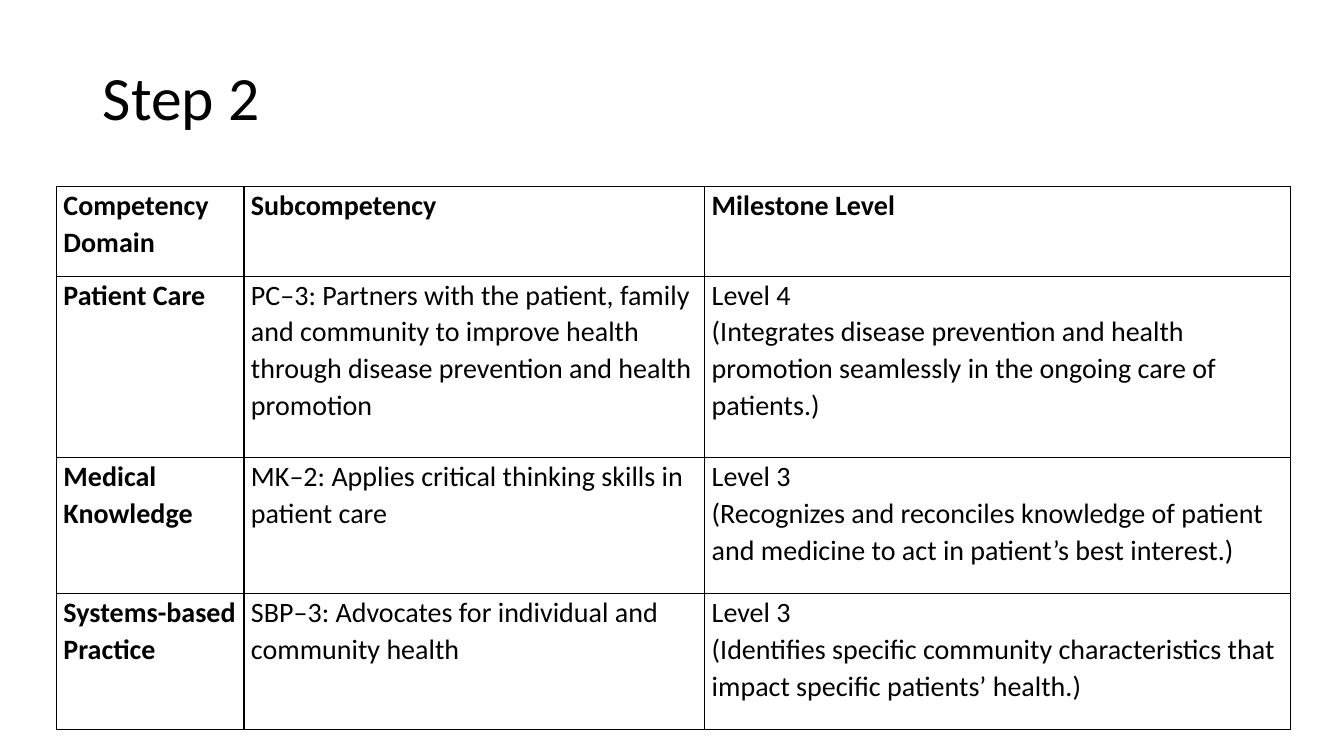
import pptx
import pptx.dml.color
import pptx.enum.text
import pptx.oxml.ns
import pptx.util
from lxml import etree

Inches = pptx.util.Inches
FONT = "Calibri"
BLACK = "000000"
WHITE = "FFFFFF"

COLUMN_WIDTHS = [1.86, 4.57, 5.81]
ROW_HEIGHTS = [0.89, 1.8, 1.35, 1.35]

# Each cell is a list of paragraphs
ROWS = [
    [["Competency Domain"], ["Subcompetency"], ["Milestone Level"]],
    [
        ["Patient Care"],
        ["PC–3: Partners with the patient, family and community to improve "
         "health through disease prevention and health promotion"],
        ["Level 4",
         "(Integrates disease prevention and health promotion seamlessly "
         "in the ongoing care of patients.)"],
    ],
    [
        ["Medical Knowledge"],
        ["MK–2: Applies critical thinking skills in patient care"],
        ["Level 3",
         "(Recognizes and reconciles knowledge of patient and medicine "
         "to act in patient’s best interest.)"],
    ],
    [
        ["Systems-based Practice"],
        ["SBP–3: Advocates for individual and community health"],
        ["Level 3",
         "(Identifies specific community characteristics that impact "
         "specific patients’ health.)"],
    ],
]


def color(hex_string):
    return pptx.dml.color.RGBColor.from_string(hex_string)


def add_run(paragraph, text, size, bold=False):
    run = paragraph.add_run()
    run.text = text
    run.font.name = FONT
    run.font.size = pptx.util.Pt(size)
    run.font.bold = bold
    run.font.color.rgb = color(BLACK)


def add_borders(cell):
    properties = cell._tc.get_or_add_tcPr()
    for side in ("a:lnL", "a:lnR", "a:lnT", "a:lnB"):
        line = etree.SubElement(properties, pptx.oxml.ns.qn(side),
                                w=str(pptx.util.Pt(1)))
        fill = etree.SubElement(line, pptx.oxml.ns.qn("a:solidFill"))
        etree.SubElement(fill, pptx.oxml.ns.qn("a:srgbClr"), val=BLACK)


def place_title(slide, text, left, top, width, height):
    title = slide.shapes.title
    title.left, title.top = Inches(left), Inches(top)
    title.width, title.height = Inches(width), Inches(height)
    frame = title.text_frame
    frame.word_wrap = True
    frame.vertical_anchor = pptx.enum.text.MSO_ANCHOR.MIDDLE
    paragraph = frame.paragraphs[0]
    paragraph.alignment = pptx.enum.text.PP_ALIGN.LEFT
    paragraph.line_spacing = 0.9
    add_run(paragraph, text, 44)


def fill_cell(cell, texts, bold):
    add_borders(cell)
    cell.fill.solid()
    cell.fill.fore_color.rgb = color(WHITE)
    cell.margin_left = cell.margin_right = Inches(0.07)
    cell.margin_top = cell.margin_bottom = 0
    cell.vertical_anchor = pptx.enum.text.MSO_ANCHOR.TOP
    frame = cell.text_frame
    for index, text in enumerate(texts):
        paragraph = frame.add_paragraph() if index else frame.paragraphs[0]
        paragraph.line_spacing = 1.07
        add_run(paragraph, text, 20, bold)


def add_milestone_table(slide, left, top):
    table = slide.shapes.add_table(
        len(ROWS), len(COLUMN_WIDTHS), Inches(left), Inches(top),
        Inches(sum(COLUMN_WIDTHS)), Inches(sum(ROW_HEIGHTS))).table
    table.first_row = False
    table.horz_banding = False
    for column, width in zip(table.columns, COLUMN_WIDTHS):
        column.width = Inches(width)
    for row, height in zip(table.rows, ROW_HEIGHTS):
        row.height = Inches(height)
    # The header row and the domain column are bold
    for row_index, row in enumerate(ROWS):
        for column_index, texts in enumerate(row):
            bold = row_index == 0 or column_index == 0
            fill_cell(table.cell(row_index, column_index), texts, bold)


def main():
    presentation = pptx.Presentation()
    presentation.slide_width = Inches(13.33)
    presentation.slide_height = Inches(7.5)
    slide = presentation.slides.add_slide(presentation.slide_layouts[5])
    place_title(slide, "Step 2", 0.92, 0.4, 11.5, 1.19)
    add_milestone_table(slide, 0.56, 1.85)
    presentation.save("out.pptx")


if __name__ == "__main__":
    main()
